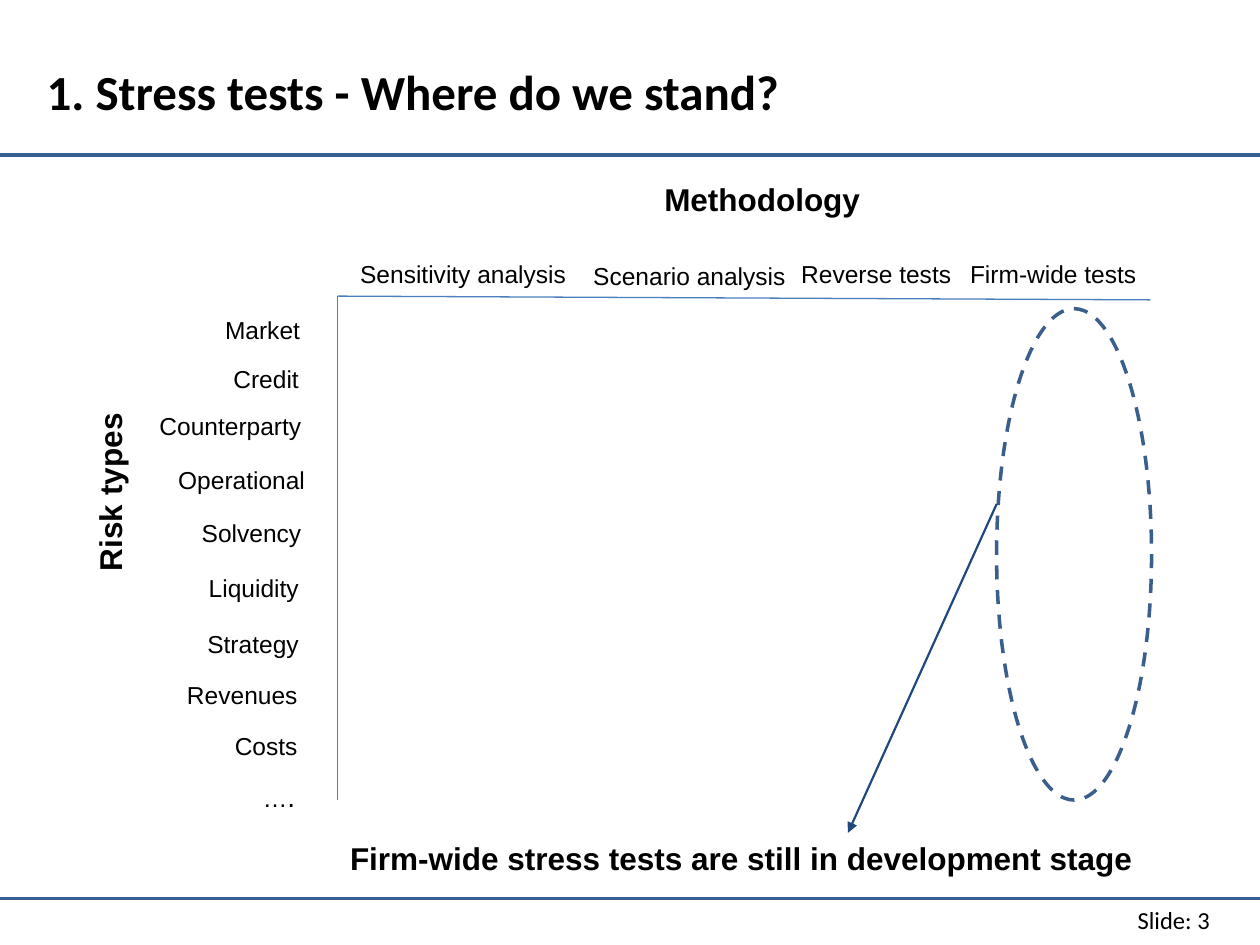
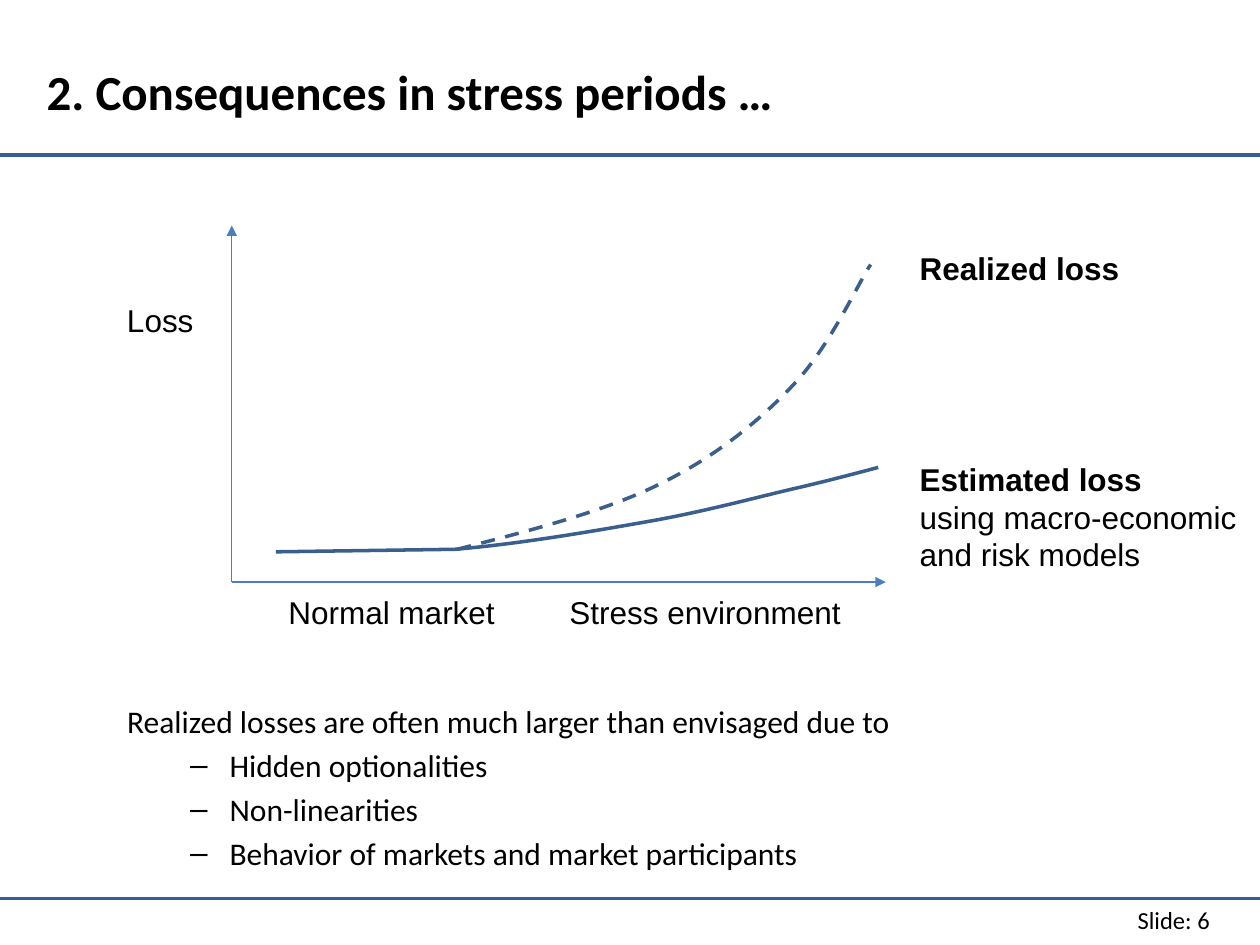
"""Builds two slides on stress tests: a coverage matrix and a loss curve."""
from dataclasses import dataclass

from lxml import etree
from pptx import Presentation
from pptx import util as u
from pptx.dml.color import RGBColor
from pptx.enum import dml, shapes, text
from pptx.oxml.ns import qn

PX = u.Inches(1) // 100
W, H = 1000, 750
LEFT, CENTER, RIGHT = text.PP_ALIGN.LEFT, text.PP_ALIGN.CENTER, text.PP_ALIGN.RIGHT


@dataclass(frozen=True)
class Theme:
    heading: str = "Calibri"
    label: str = "Arial"
    ink: str = "000000"
    paper: str = "FFFFFF"
    rule: str = "376092"
    axis: str = "4B7EBC"
    curve: str = "3A5F8C"
    pointer: str = "1F497D"
    title: int = 28
    large: int = 18
    dot: int = 16
    small: int = 14
    thin: float = 0.75
    medium: float = 1.25
    thick: int = 2


T = Theme()

RULES = [123, 713]
TITLE_BOX = (27, 21, 866, 102)
FOOTER_BOX = (879, 713, 91, 34)

MATRIX = {
    "title": "1. Stress tests - Where do we stand?",
    "number": 3,
    "methods": [("Sensitivity analysis", 276, 201), ("Scenario analysis", 461, 202),
                ("Reverse tests", 626, 201), ("Firm-wide tests", 760, 201)],
    "risks": [("Market", 248, 245), ("Credit", 247, 284), ("Counterparty", 249, 321),
              ("Operational", 252, 364), ("Solvency", 249, 406), ("Liquidity", 247, 450),
              ("Strategy", 247, 494), ("Revenues", 246, 535), ("Costs", 246, 575),
              ("…", 244, 614)],
    "headings": [("Methodology", (420, 138, 370, 40), CENTER, 0),
                 ("Risk types", (14, 370, 146, 40), LEFT, 270),
                 ("Firm-wide stress tests are still in development stage",
                  (268, 661, 730, 40), LEFT, 0)],
    "axes": [(268, 235, 913, 238), (268, 235, 268, 635)],
    "firm_wide": (791, 245, 123, 390),
    "pointer": (791, 400, 673, 661),
}
METHOD_W, RISK_W, ROW_H = 189, 135, 34

LOSSES = {
    "title": "2. Consequences in stress periods …",
    "number": 6,
    "axes": [(184, 462, 703, 462), (184, 462, 184, 179)],
    "labels": [("Normal market", (219, 466, 220, 40)),
               ("Stress environment", (442, 466, 315, 40)),
               ("Loss", (91, 234, 87, 40))],
    "legends": [(["Realized loss"], (720, 193, 278, 40)),
                (["Estimated loss", "using macro-economic and risk models"],
                 (720, 360, 278, 101))],
    "estimated": [(219, 438), (361, 436),
                  (410, 432), (469, 422), (514, 414),
                  (560, 406), (603, 394), (634, 387),
                  (664, 380), (697, 371), (697, 371)],
    "realized": [(363, 436),
                 (421, 421), (480, 406), (524, 384),
                 (569, 362), (604, 333), (631, 304),
                 (659, 274), (681, 225), (691, 210)],
    "body_box": (91, 552, 870, 146),
    "lead": "Realized losses are often much larger than envisaged due to",
    "causes": ["Hidden optionalities", "Non-linearities",
               "Behavior of markets and market participants"],
}


def emu(values):
    return [v * PX for v in values]


def style(p, size, face=T.label, bold=False, align=LEFT):
    p.alignment = align
    p.font.name, p.font.size, p.font.bold = face, u.Pt(size), bold
    p.font.color.rgb = RGBColor.from_string(T.ink)


def place(sp, box):
    sp.left, sp.top, sp.width, sp.height = emu(box)


def label(s, lines, box, size, bold=(False,), **kw):
    sp = s.shapes.add_textbox(*emu(box))
    tf = sp.text_frame
    tf.word_wrap = True
    tf.text = "\n".join(lines)
    for p, b in zip(tf.paragraphs, bold):
        style(p, size, bold=b, **kw)
    return sp


def stroke(line, color, width, dashed=False):
    line.color.rgb = RGBColor.from_string(color)
    line.width = u.Pt(width)
    if dashed:
        line.dash_style = dml.MSO_LINE.DASH


def connect(s, ends, color, width, arrow=False):
    c = s.shapes.add_connector(shapes.MSO_CONNECTOR.STRAIGHT, *emu(ends))
    stroke(c.line, color, width)
    pr = c._element.spPr
    if arrow:
        etree.SubElement(pr.find(qn("a:ln")), qn("a:tailEnd"), type="triangle")
    etree.SubElement(pr, qn("a:effectLst"))


def curve(s, points, straight=0, dashed=False):
    fb = s.shapes.build_freeform(*points[0], scale=PX)
    fb.add_line_segments(points[1:], close=False)
    sp = fb.convert_to_shape()
    path = next(sp._element.iter(qn("a:path")))
    segments = path.findall(qn("a:lnTo"))[straight:]
    for i in range(0, len(segments), 3):
        bezier = etree.SubElement(path, qn("a:cubicBezTo"))
        for segment in segments[i:i + 3]:
            bezier.append(segment[0])
            path.remove(segment)
    sp.fill.background()
    sp.shadow.inherit = False
    stroke(sp.line, T.curve, T.thick, dashed)


def new_slide(prs, layout, content):
    s = prs.slides.add_slide(prs.slide_layouts[layout])
    for y in RULES:
        connect(s, (0, y, W, y), T.rule, T.thick)
    sp = s.shapes.title
    place(sp, TITLE_BOX)
    tf = sp.text_frame
    tf.text = content["title"]
    tf.vertical_anchor = text.MSO_ANCHOR.MIDDLE
    tf.auto_size = text.MSO_AUTO_SIZE.NONE
    style(tf.paragraphs[0], T.title, T.heading, bold=True)
    label(s, [f"Slide: {content['number']}"], FOOTER_BOX, T.small,
          face=T.heading, align=RIGHT)
    return s


def matrix_slide(prs):
    s = new_slide(prs, 5, MATRIX)
    for ends in MATRIX["axes"]:
        connect(s, ends, T.axis, T.thin)
    for name, x, y in MATRIX["methods"]:
        label(s, [name], (x, y, METHOD_W, ROW_H), T.small)
    for name, right, y in MATRIX["risks"]:
        sp = label(s, [name], (right - RISK_W, y, RISK_W, ROW_H), T.small, align=RIGHT)
    r = sp.text_frame.paragraphs[0].add_run()
    r.text = "."
    r.font.size = u.Pt(T.dot)
    for name, box, align, angle in MATRIX["headings"]:
        sp = label(s, [name], box, T.large, bold=[True], align=align)
        if angle:
            sp.rotation = angle
    sp = s.shapes.add_shape(shapes.MSO_SHAPE.OVAL, *emu(MATRIX["firm_wide"]))
    sp.shadow.inherit = False
    sp.fill.solid()
    sp.fill.fore_color.rgb = RGBColor.from_string(T.paper)
    stroke(sp.line, T.curve, T.thick, dashed=True)
    connect(s, MATRIX["pointer"], T.pointer, T.medium, arrow=True)


def losses_slide(prs):
    s = new_slide(prs, 1, LOSSES)
    body = s.placeholders[1]
    place(body, LOSSES["body_box"])
    tf = body.text_frame
    tf.auto_size = text.MSO_AUTO_SIZE.NONE
    tf.text = "\n".join([LOSSES["lead"], *LOSSES["causes"]])
    lead, *causes = tf.paragraphs
    pr = lead._p.get_or_add_pPr()
    pr.set("marL", "0")
    pr.set("indent", "0")
    etree.SubElement(pr, qn("a:buNone"))
    lead.space_before = u.Pt(0)
    for p in causes:
        p.level = 1
    for p in tf.paragraphs:
        style(p, T.large, T.heading)
    for ends in LOSSES["axes"]:
        connect(s, ends, T.axis, T.thin, arrow=True)
    for name, box in LOSSES["labels"]:
        label(s, [name], box, T.large)
    curve(s, LOSSES["estimated"], straight=1)
    curve(s, LOSSES["realized"], dashed=True)
    for lines, box in LOSSES["legends"]:
        label(s, lines, box, T.large, bold=[True, False])


def main():
    prs = Presentation()
    prs.slide_width, prs.slide_height = emu((W, H))
    matrix_slide(prs)
    losses_slide(prs)
    prs.save("out.pptx")


if __name__ == "__main__":
    main()
